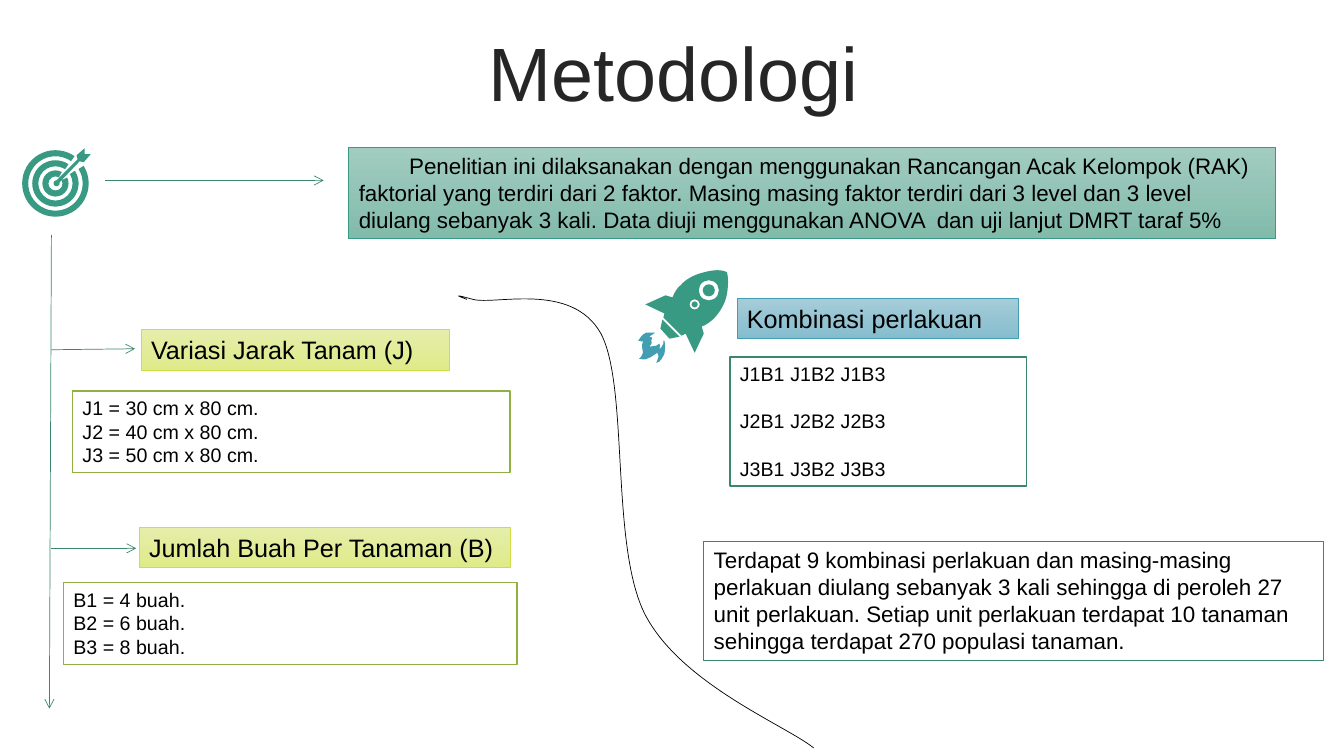
"""Build the "Metodologi" slide: a research design with factors, levels and treatment combinations."""
import math
from lxml import etree
from pptx import Presentation
from pptx import util as u
from pptx.dml.color import RGBColor
from pptx.enum import shapes, text
from pptx.oxml.ns import qn

FONT, GREEN, BLUE, DARK_GREEN = "Arial", "399A84", "429EB3", "3A876B"
LIME = (("E5EEAA", "DFEB89"), "CEDD46")
TEAL = (("A2CCC0", "82BBAB"), GREEN)
SKY = (("A6CCD8", "85BDCE"), BLUE)

TITLE = "Metodologi"
HEADINGS = [
    ((3.46, 1.46, 9.19, 0.91), 16, TEAL,
     "\tPenelitian ini dilaksanakan dengan menggunakan Rancangan Acak Kelompok (RAK) faktorial "
     "yang terdiri dari 2 faktor. Masing masing faktor terdiri dari 3 level dan 3 level diulang "
     "sebanyak 3 kali. Data diuji menggunakan ANOVA  dan uji lanjut DMRT taraf 5%"),
    ((1.4, 3.27, 3.06, 0.4), 18, LIME, "Variasi Jarak Tanam (J)"),
    ((1.38, 5.23, 3.68, 0.4), 18, LIME, "Jumlah Buah Per Tanaman (B)"),
    ((7.31, 2.96, 2.79, 0.4), 18, SKY, "Kombinasi perlakuan"),
]
DETAILS = [
    ((0.72, 3.88, 4.34, 0.81), 14, "90B141", 0,
     [f"J{level} = {spacing} cm x 80 cm." for level, spacing in enumerate((30, 40, 50), 1)]),
    ((0.63, 5.78, 4.5, 0.81), 14, "90B141", 0,
     [f"B{level} = {fruits} buah." for level, fruits in enumerate((4, 6, 8), 1)]),
    ((7.24, 3.54, 2.94, 1.28), 14, DARK_GREEN, 17,
     ["\t".join(f"J{j}B{b}" for b in (1, 2, 3)) for j in (1, 2, 3)]),
    ((6.98, 5.37, 6.15, 1.18), 16, DARK_GREEN, 0,
     ["Terdapat 9 kombinasi perlakuan dan masing-masing perlakuan diulang sebanyak 3 kali "
      "sehingga di peroleh 27 unit perlakuan. Setiap unit perlakuan terdapat 10 tanaman "
      "sehingga terdapat 270 populasi tanaman."]),
]
ARROWS = [
    (1.04, 1.79, 3.21, 1.79), (0.51, 2.33, 0.49, 7.03),
    (0.51, 3.47, 1.34, 3.46), (0.51, 5.44, 1.35, 5.44),
]

BULLSEYE = (0.55, 1.82)
RINGS = [(0.33, 0.27, 32, 55), (0.23, 0.17, 33, 56), (0.13, 0.07, 27, 61)]
DART = [(0.56, 1.79), (0.77, 1.58), (0.76, 1.54), (0.84, 1.47), (0.84, 1.53), (0.9, 1.53),
        (0.83, 1.61), (0.79, 1.6), (0.59, 1.81), (0.03, -16, 300)]
PORTHOLES = [(6.89, 3.02, 0.03), (6.89, 3.02, 0.05), (7.03, 2.88, 0.06), (7.03, 2.88, 0.1)]
ROCKET_FIN = [(6.57, 3.17), (6.74, 3.34), (6.64, 3.36), (6.55, 3.26)]
ROCKET_BODY = [
    (7.21, 2.7), (7.23, 2.77, 7.22, 2.89, 7.2, 2.96), (7.18, 3.03, 7.13, 3.11, 7.08, 3.16),
    (7.05, 3.19, 7.01, 3.22, 6.96, 3.24), (6.98, 3.31), (6.89, 3.5), (6.8, 3.31),
    (6.76, 3.33), (6.58, 3.15), (6.59, 3.11), (6.4, 3.02), (6.6, 2.93), (6.67, 2.95),
    (6.69, 2.9, 6.72, 2.85, 6.75, 2.83), (6.8, 2.77, 6.88, 2.73, 6.95, 2.71),
    (7.02, 2.69, 7.13, 2.66, 7.21, 2.7),
]
FLAME = [
    (6.58, 3.38), (6.59, 3.38), (6.6, 3.42, 6.6, 3.46, 6.59, 3.51),
    (6.58, 3.53, 6.55, 3.6, 6.51, 3.6), (6.53, 3.54, 6.54, 3.54, 6.52, 3.5),
    (6.46, 3.54), (6.4, 3.57, 6.4, 3.57, 6.34, 3.56), (6.39, 3.51, 6.38, 3.48, 6.37, 3.45),
    (6.36, 3.43, 6.37, 3.41, 6.38, 3.39), (6.33, 3.38), (6.35, 3.36, 6.36, 3.32, 6.41, 3.3),
    (6.5, 3.3), (6.44, 3.34), (6.47, 3.35), (6.46, 3.38), (6.47, 3.39, 6.47, 3.41, 6.44, 3.44),
    (6.48, 3.44, 6.48, 3.44, 6.51, 3.43), (6.54, 3.41), (6.55, 3.43, 6.55, 3.43, 6.54, 3.46),
    (6.56, 3.46, 6.57, 3.42, 6.58, 3.41),
]
DIVIDER = [
    (4.63, 2.97), (4.55, 2.94, 4.47, 2.91, 4.69, 2.97), (4.91, 3.03, 5.67, 2.79, 5.96, 3.31),
    (6.24, 3.84, 6.05, 5.42, 6.4, 6.1), (6.76, 6.79, 7.8, 7.2, 8.07, 7.42),
]


def color(hex_code):
    return RGBColor.from_string(hex_code)


def on_circle(x, y, radius, degrees):
    angle = math.radians(degrees)
    return x + radius * math.cos(angle), y + radius * math.sin(angle)


def ring_contour(outer, inner, low, high):
    sweep = 360 - high + low
    return [on_circle(*BULLSEYE, outer, -low), (outer, -low, sweep),
            on_circle(*BULLSEYE, inner, -high), (inner, -high, -sweep)]


def porthole_contour(x, y, radius):
    return [(x + radius, y), (radius, 0, 180), (radius, 180, 180)]


def trace(track, place, contour, closed):
    """Write one contour: pairs are corners, triples arcs (radius, start, sweep), sixes curves."""
    for index, part in enumerate(contour):
        if len(part) == 3:
            radius, start, sweep = part
            reach = str(u.Inches(radius))
            etree.SubElement(track, qn("a:arcTo"), wR=reach, hR=reach,
                             stAng=str(start * 60000), swAng=str(sweep * 60000))
            continue
        tag = "a:cubicBezTo" if len(part) == 6 else "a:lnTo" if index else "a:moveTo"
        step = etree.SubElement(track, qn(tag))
        for x, y in zip(part[::2], part[1::2]):
            etree.SubElement(step, qn("a:pt"), x=str(u.Inches(x - place[0])),
                             y=str(u.Inches(y - place[1])))
    if closed:
        etree.SubElement(track, qn("a:close"))


def add_outline(slide, place, contours, fill=None, line=None):
    left, top, width, height = map(u.Inches, place)
    builder = slide.shapes.build_freeform(left, top)
    builder.add_line_segments([(left + width, top + height)], close=False)
    outline = builder.convert_to_shape()
    track = outline._element.find(".//" + qn("a:path"))
    for step in list(track):
        track.remove(step)
    for contour in contours:
        trace(track, place, contour, fill is not None)
    outline.shadow.inherit = False
    if fill:
        outline.fill.solid()
        outline.fill.fore_color.rgb = color(fill)
        outline.line.fill.background()
    else:
        outline.fill.background()
        outline.line.color.rgb = color(line)
        outline.line.width = u.Pt(0.5)


def write(frame, lines, size, ink="000000", gap=0):
    frame.word_wrap = True
    for index, words in enumerate(lines):
        paragraph = frame.add_paragraph() if index else frame.paragraphs[0]
        paragraph.alignment = text.PP_ALIGN.LEFT
        paragraph.space_before = u.Pt(gap if index else 0)
        run = paragraph.add_run()
        run.text = words
        run.font.name, run.font.size = FONT, u.Pt(size)
        run.font.color.rgb = color(ink)


def add_box(slide, place, lines, size, fills, border, width, gap=0):
    box = slide.shapes.add_shape(shapes.MSO_SHAPE.RECTANGLE, *map(u.Inches, place))
    box.shadow.inherit = False
    if len(fills) == 2:
        box.fill.gradient()
        box.fill.gradient_angle = 270
        for stop, shade in zip(box.fill.gradient_stops, fills):
            stop.color.rgb = color(shade)
    else:
        box.fill.solid()
        box.fill.fore_color.rgb = color(fills[0])
    box.line.color.rgb = color(border)
    box.line.width = u.Pt(width)
    box.text_frame.vertical_anchor = text.MSO_ANCHOR.TOP
    write(box.text_frame, lines, size, gap=gap)


def add_arrow(slide, ends):
    arrow = slide.shapes.add_connector(shapes.MSO_CONNECTOR.STRAIGHT, *map(u.Inches, ends))
    arrow.line.color.rgb = color(DARK_GREEN)
    arrow.line.width = u.Pt(0.5)
    etree.SubElement(arrow.line._get_or_add_ln(), qn("a:tailEnd"), type="arrow")
    etree.SubElement(arrow._element.spPr, qn("a:effectLst"))


def main():
    deck = Presentation()
    deck.slide_width, deck.slide_height = u.Inches(13.33), u.Inches(7.5)
    slide = deck.slides.add_slide(deck.slide_layouts[6])

    title = slide.shapes.add_textbox(*map(u.Inches, (0.35, 0.37, 12.66, 0.79))).text_frame
    title.vertical_anchor = text.MSO_ANCHOR.MIDDLE
    write(title, [TITLE], 54, "262626")
    title.paragraphs[0].alignment = text.PP_ALIGN.CENTER
    title.paragraphs[0].line_spacing = 0.9

    for ends in ARROWS:
        add_arrow(slide, ends)
    rings = [ring_contour(*ring) for ring in RINGS]
    add_outline(slide, (0.22, 1.47, 0.68, 0.68), rings + [DART], GREEN)
    portholes = [porthole_contour(*porthole) for porthole in PORTHOLES]
    add_outline(slide, (6.4, 2.69, 0.82, 0.81), [ROCKET_BODY, ROCKET_FIN] + portholes, GREEN)
    add_outline(slide, (6.33, 3.3, 0.27, 0.3), [FLAME], BLUE)
    add_outline(slide, (4.47, 2.79, 3.61, 4.63), [DIVIDER], line="000000")

    for place, size, (fills, border), words in HEADINGS:
        add_box(slide, place, [words], size, fills, border, 0.5)
    for place, size, border, gap, lines in DETAILS:
        add_box(slide, place, lines, size, ["FFFFFF"], border, 1, gap)
    deck.save("out.pptx")


if __name__ == "__main__":
    main()
